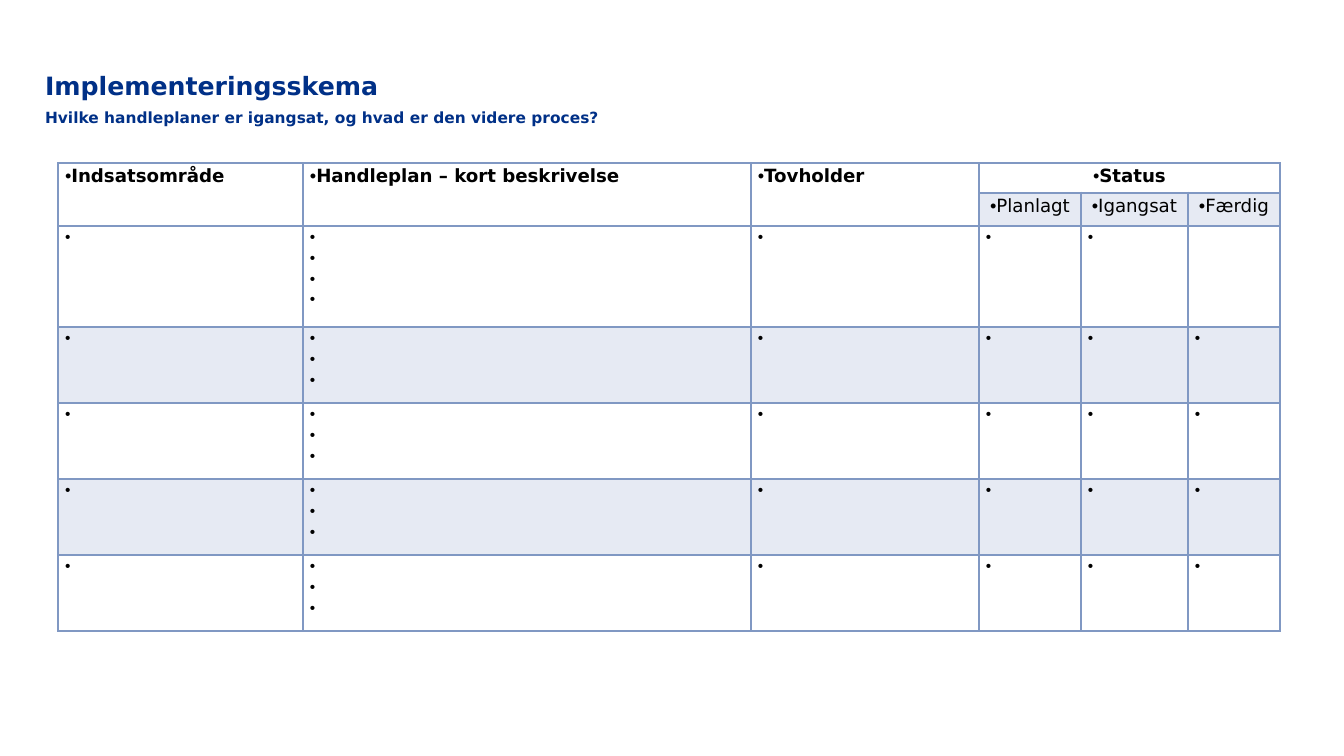
"""Build the implementation plan slide with its status table."""
import pptx
import pptx.dml.color
import pptx.enum.text
import pptx.oxml
import pptx.oxml.ns
import pptx.util

NAVY = pptx.dml.color.RGBColor(0x00, 0x30, 0x87)
BLACK = pptx.dml.color.RGBColor(0x00, 0x00, 0x00)
WHITE = pptx.dml.color.RGBColor(0xFF, 0xFF, 0xFF)
BAND = pptx.dml.color.RGBColor(0xE6, 0xEA, 0xF3)
BORDER = pptx.dml.color.RGBColor(0x80, 0x98, 0xC3)

COLUMN_WIDTHS = [245, 448, 228, 102, 107, 92]
ROW_HEIGHTS = [30, 33, 101] + [76] * 4
HEADINGS = ["Indsatsområde", "Handleplan – kort beskrivelse", "Tovholder"]
STATUSES = ["Planlagt", "Igangsat", "Færdig"]
PLAN_COLUMN = 1
STATUS_COLUMN = len(HEADINGS)
FIRST_BODY_ROW = 2


class SlideBuilder:
    FONT = "DejaVu Sans"
    EMU_PER_PX = 914400 / 100.8

    def __init__(self, deck):
        self.page = deck.slides.add_slide(deck.slide_layouts[5])

    @classmethod
    def px(cls, length):
        return pptx.util.Emu(round(length * cls.EMU_PER_PX))

    def add_span(self, para, text, size, color, bold):
        span = para.add_run()
        span.text = text
        span.font.name = self.FONT
        span.font.size = pptx.util.Pt(size)
        span.font.bold = bold
        span.font.color.rgb = color

    def fill_heading(self, box, text, size):
        frame = box.text_frame
        frame.word_wrap = True
        frame.auto_size = pptx.enum.text.MSO_AUTO_SIZE.NONE
        frame.vertical_anchor = pptx.enum.text.MSO_ANCHOR.TOP
        frame.margin_left = frame.margin_right = 0
        frame.margin_top = frame.margin_bottom = 0
        para = frame.paragraphs[0]
        para.alignment = pptx.enum.text.PP_ALIGN.LEFT
        para.line_spacing = 1.04
        self.add_span(para, text, size, NAVY, True)

    def title(self, text, left, top, width, height, size):
        box = self.page.shapes.title
        box.left, box.top = self.px(left), self.px(top)
        box.width, box.height = self.px(width), self.px(height)
        self.fill_heading(box, text, size)

    def text(self, text, left, top, width, height, size):
        box = self.page.shapes.add_textbox(*map(self.px, (left, top, width, height)))
        self.fill_heading(box, text, size)

    def table(self, left, top, widths, heights):
        frame = self.page.shapes.add_table(
            len(heights), len(widths),
            *map(self.px, (left, top, sum(widths), sum(heights))))
        table = frame.table
        table.first_row = table.horz_banding = False
        for column, width in zip(table.columns, widths):
            column.width = self.px(width)
        for row, height in zip(table.rows, heights):
            row.height = self.px(height)
        return table

    def style_cell(self, cell, color, top_line=1, bottom_line=1):
        cell.margin_left = cell.margin_right = self.px(7)
        cell.margin_top = cell.margin_bottom = 0
        cell.fill.solid()
        cell.fill.fore_color.rgb = color
        properties = cell._tc.get_or_add_tcPr()
        sides = {"lnL": 1, "lnR": 1, "lnT": top_line, "lnB": bottom_line}
        for place, (side, width) in enumerate(sides.items()):
            properties.insert(place, pptx.oxml.parse_xml(
                f'<a:{side} {pptx.oxml.ns.nsdecls("a")} w="{pptx.util.Pt(width)}">'
                f'<a:solidFill><a:srgbClr val="{BORDER}"/></a:solidFill></a:{side}>'))

    def bullets(self, cell, texts, size, bold=False, centered=False):
        frame = cell.text_frame
        for index, text in enumerate(texts):
            para = frame.add_paragraph() if index else frame.paragraphs[0]
            properties = para._p.get_or_add_pPr()
            properties.set("marL", "0")
            properties.set("indent", "0")
            for element in (f'buClr {{}}><a:srgbClr val="{BLACK}"/></a:buClr>',
                            'buFont {} typeface="Arial"/>',
                            'buChar {} char="•"/>'):
                properties.append(pptx.oxml.parse_xml(
                    "<a:" + element.format(pptx.oxml.ns.nsdecls("a"))))
            para.line_spacing = 1.15
            if centered:
                para.alignment = pptx.enum.text.PP_ALIGN.CENTER
            self.add_span(para, text, size, BLACK, bold)


def add_plan_table(builder):
    table = builder.table(58, 163, COLUMN_WIDTHS, ROW_HEIGHTS)
    last_column = len(COLUMN_WIDTHS) - 1
    for row in range(len(ROW_HEIGHTS)):
        for column in range(len(COLUMN_WIDTHS)):
            shaded = row % 2 and (row >= FIRST_BODY_ROW or column >= STATUS_COLUMN)
            builder.style_cell(table.cell(row, column), BAND if shaded else WHITE,
                               top_line=2 if row == 1 else 1,
                               bottom_line=2 if row == 0 else 1)

    for column, heading in enumerate(HEADINGS):
        table.cell(0, column).merge(table.cell(1, column))
        builder.bullets(table.cell(0, column), [heading], 13, bold=True)
    table.cell(0, STATUS_COLUMN).merge(table.cell(0, last_column))
    builder.bullets(table.cell(0, STATUS_COLUMN), ["Status"], 13, True, True)
    for column, status in enumerate(STATUSES, STATUS_COLUMN):
        builder.bullets(table.cell(1, column), [status], 13, centered=True)

    for row in range(FIRST_BODY_ROW, len(ROW_HEIGHTS)):
        for column in range(len(COLUMN_WIDTHS)):
            if (row, column) == (FIRST_BODY_ROW, last_column):
                continue
            plans = 4 if row == FIRST_BODY_ROW else 3
            count = plans if column == PLAN_COLUMN else 1
            builder.bullets(table.cell(row, column), [" "] * count, 11)


def main():
    deck = pptx.Presentation()
    deck.slide_width = SlideBuilder.px(1344)
    deck.slide_height = SlideBuilder.px(756)
    builder = SlideBuilder(deck)
    builder.title("Implementeringsskema", 45, 69, 1249, 39, 18)
    add_plan_table(builder)
    builder.text("Hvilke handleplaner er igangsat, og hvad er den videre proces?",
                 45, 107, 1249, 39, 11)
    deck.save("out.pptx")


if __name__ == "__main__":
    main()
